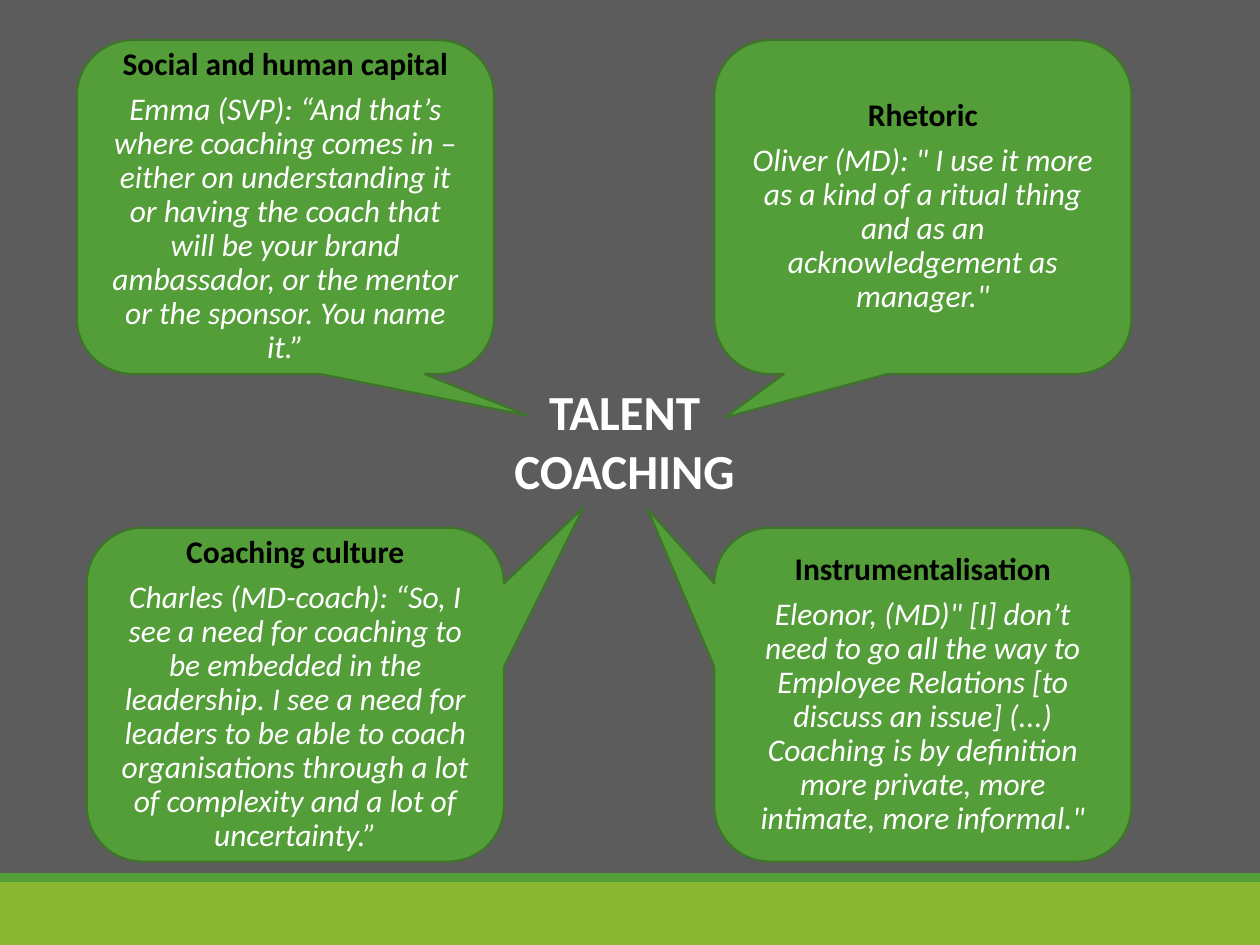
import pptx
import pptx.util
import pptx.dml.color
import pptx.enum.shapes
import pptx.enum.text

Cm, Pt = pptx.util.Cm, pptx.util.Pt
RGB = pptx.dml.color.RGBColor.from_string
Kind = pptx.enum.shapes.MSO_SHAPE
Align = pptx.enum.text.PP_ALIGN
Mid = pptx.enum.text.MSO_ANCHOR.MIDDLE
Top = pptx.enum.text.MSO_ANCHOR.TOP


class Theme:
    back = "5C5C5C"
    green = "549E39"
    edge = "3E752A"
    lime = "8AB833"
    dark = "000000"
    light = "FFFFFF"
    font = "Calibri"
    title = 28
    body = 18


def write(frame, text, size=Theme.body, color=Theme.light, bold=False,
          slant=False, line=1.0, after=0):
    """Fill the first paragraph if it is empty, otherwise add one."""
    para = frame.paragraphs[-1]
    if para.text:
        para = frame.add_paragraph()
    para.alignment = Align.CENTER
    para.line_spacing = line
    para.space_before = Pt(0)
    para.space_after = Pt(after)
    run = para.add_run()
    run.text = text
    run.font.name = Theme.font
    run.font.size = Pt(size)
    run.font.bold = bold
    run.font.italic = slant
    run.font.color.rgb = RGB(color)


deck = pptx.Presentation()
deck.slide_width, deck.slide_height = Cm(25.4), Cm(19.05)
slide = deck.slides.add_slide(deck.slide_layouts[5])
slide.background.fill.solid()
slide.background.fill.fore_color.rgb = RGB(Theme.back)

# Bands along the bottom edge
for top, high, color in ((17.78, 1.27, Theme.lime), (17.6, 0.18, Theme.green)):
    band = slide.shapes.add_shape(Kind.RECTANGLE, Cm(0), Cm(top),
                                  deck.slide_width, Cm(high))
    band.shadow.inherit = False
    band.fill.solid()
    band.fill.fore_color.rgb = RGB(color)
    band.line.fill.background()

# Title in the centre
title = slide.shapes.title
title.left, title.top = Cm(9.96), Cm(7.57)
title.width, title.height = Cm(5.26), Cm(2.64)
frame = title.text_frame
frame.word_wrap = True
frame.auto_size = pptx.enum.text.MSO_AUTO_SIZE.NONE
frame.vertical_anchor = Top
write(frame, "TALENT COACHING", size=Theme.title, bold=True)

# Callouts: left, top, tip across, tip down, heading, quote
right, upper, lower = 14.4, 0.81, 10.64
quotes = [
    (1.55, upper, 0.582, 0.625, "Social and human capital",
     "Emma (SVP): “And that’s where coaching comes in – either on "
     "understanding it or having the coach that will be your brand "
     "ambassador, or the mentor or the sponsor. You name it.”"),
    (1.75, lower, 0.691, -0.561, "Coaching culture",
     "Charles (MD-coach): “So, I see a need for coaching to be embedded in "
     "the leadership. I see a need for leaders to be able to coach "
     "organisations through a lot of complexity and a lot of uncertainty.”"),
    (right, lower, -0.66, -0.556, "Instrumentalisation",
     'Eleonor, (MD)" [I] don’t need to go all the way to Employee Relations '
     "[to discuss an issue] (...) Coaching is by definition more private, "
     'more intimate, more informal."'),
    (right, upper, -0.474, 0.63, "Rhetoric",
     'Oliver (MD): " I use it more as a kind of a ritual thing and as an '
     'acknowledgement as manager."'),
]
for left, top, across, down, head, quote in quotes:
    call = slide.shapes.add_shape(Kind.ROUNDED_RECTANGULAR_CALLOUT, Cm(left),
                                  Cm(top), Cm(8.41), Cm(6.73))
    call.adjustments[0] = across
    call.adjustments[1] = down
    call.shadow.inherit = False
    call.fill.solid()
    call.fill.fore_color.rgb = RGB(Theme.green)
    call.line.color.rgb = RGB(Theme.edge)
    call.line.width = Pt(1.25)
    frame = call.text_frame
    frame.word_wrap = True
    frame.vertical_anchor = Mid
    write(frame, head, color=Theme.dark, bold=True, line=0.9, after=6.3)
    write(frame, quote, slant=True, line=0.9, after=6.3)

deck.save("out.pptx")
